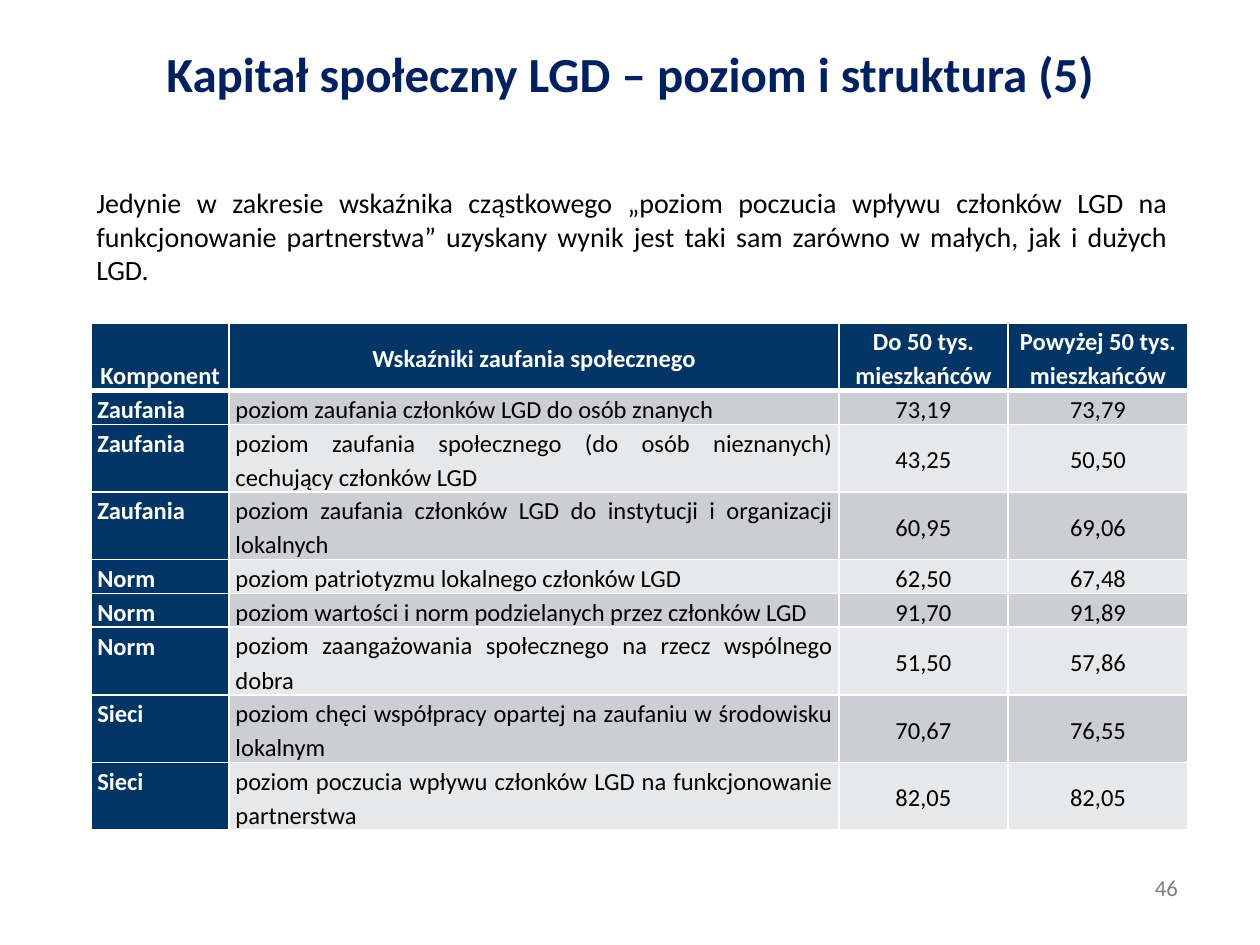
from lxml.etree import SubElement
from pptx import Presentation
from pptx.dml.color import RGBColor
from pptx.enum.text import MSO_ANCHOR as ANCHOR, PP_ALIGN as ALIGN
from pptx.oxml.ns import qn
from pptx.util import Pt

FONT = "Calibri"
NAVY, TITLE_BLUE, GREY = "013565", "002060", "808080"
WHITE, BLACK = "FFFFFF", "000000"
BANDS = ("CCCED3", "E7E8EA")
COL_WIDTHS = (79, 348.5, 96.5, 103)
LINE_HEIGHT = 19.3

HEADERS = ("Komponent", "Wskaźniki zaufania społecznego",
           "Do 50 tys. mieszkańców", "Powyżej 50 tys. mieszkańców")
# component, indicator, small LGD, large LGD, text lines in the row
INDICATORS = (
    ("Zaufania", "poziom zaufania członków LGD do osób znanych", "73,19", "73,79", 1),
    ("Zaufania", "poziom zaufania społecznego (do osób nieznanych) cechujący członków LGD",
     "43,25", "50,50", 2),
    ("Zaufania", "poziom zaufania członków LGD do instytucji i organizacji lokalnych",
     "60,95", "69,06", 2),
    ("Norm", "poziom patriotyzmu lokalnego członków LGD", "62,50", "67,48", 1),
    ("Norm", "poziom wartości i norm podzielanych przez członków LGD", "91,70", "91,89", 1),
    ("Norm", "poziom zaangażowania społecznego na rzecz wspólnego dobra",
     "51,50", "57,86", 2),
    ("Sieci", "poziom chęci współpracy opartej na zaufaniu w środowisku lokalnym",
     "70,67", "76,55", 2),
    ("Sieci", "poziom poczucia wpływu członków LGD na funkcjonowanie partnerstwa",
     "82,05", "82,05", 2),
)


def rgb(value):
    return RGBColor.from_string(value)


def write(tf, text, size, color, align, bold=False):
    tf.text = text
    p = tf.paragraphs[0]
    p.alignment = align
    font = p.runs[0].font
    font.name, font.size, font.bold = FONT, Pt(size), bold
    font.color.rgb = rgb(color)
    return p


def add_text(slide, box, text, size, color, align, bold=False):
    tf = slide.shapes.add_textbox(*map(Pt, box)).text_frame
    tf.word_wrap = True
    write(tf, text, size, color, align, bold)


def set_borders(cell, top=1, bottom=1):
    tc_pr = cell._tc.get_or_add_tcPr()
    for i, (side, width) in enumerate((("L", 1), ("R", 1), ("T", top), ("B", bottom))):
        ln = SubElement(tc_pr, qn(f"a:ln{side}"), w=str(Pt(width)))
        fill = SubElement(ln, qn("a:solidFill"))
        SubElement(fill, qn("a:srgbClr"), val=WHITE)
        tc_pr.insert(i, ln)  # borders come before the fill


def fill_cell(cell, text, fill, color, align, anchor, bold):
    cell.margin_left = cell.margin_right = Pt(3.6)
    cell.margin_top = cell.margin_bottom = 0
    cell.vertical_anchor = anchor
    cell.fill.solid()
    cell.fill.fore_color.rgb = rgb(fill)
    write(cell.text_frame, text, 14, color, align, bold).line_spacing = 1.15


def add_indicator_table(slide, left, top):
    lines = [2] + [row[-1] for row in INDICATORS]
    frame = slide.shapes.add_table(len(lines), len(COL_WIDTHS), Pt(left), Pt(top),
                                   Pt(sum(COL_WIDTHS)), Pt(sum(lines) * LINE_HEIGHT))
    table = frame.table
    table.horz_banding = False
    for col, width in zip(table.columns, COL_WIDTHS):
        col.width = Pt(width)
    for row, count in zip(table.rows, lines):
        row.height = Pt(count * LINE_HEIGHT)

    for c, text in enumerate(HEADERS):
        cell = table.cell(0, c)
        anchor = ANCHOR.BOTTOM if c == 0 else ANCHOR.MIDDLE
        fill_cell(cell, text, NAVY, WHITE, ALIGN.CENTER, anchor, True)
        set_borders(cell, bottom=3)

    aligns = (ALIGN.LEFT, ALIGN.JUSTIFY, ALIGN.CENTER, ALIGN.CENTER)
    anchors = (ANCHOR.TOP, ANCHOR.BOTTOM, ANCHOR.MIDDLE, ANCHOR.MIDDLE)
    for r, row in enumerate(INDICATORS, 1):
        for c, (text, align, anchor) in enumerate(zip(row, aligns, anchors)):
            cell = table.cell(r, c)
            first = c == 0
            fill_cell(cell, text, NAVY if first else BANDS[(r - 1) % 2],
                      WHITE if first else BLACK, align, anchor, first)
            set_borders(cell, top=3 if r == 1 else 1)


def main():
    prs = Presentation()
    prs.slide_width, prs.slide_height = Pt(720), Pt(540)
    slide = prs.slides.add_slide(prs.slide_layouts[6])
    add_text(slide, (638, 495.5, 57, 23), "46", 13, GREY, ALIGN.CENTER)
    add_text(slide, (48, 102.5, 626.5, 65.5),
             "Jedynie w zakresie wskaźnika cząstkowego „poziom poczucia wpływu członków LGD "
             "na funkcjonowanie partnerstwa” uzyskany wynik jest taki sam zarówno w małych, "
             "jak i dużych LGD.", 16, BLACK, ALIGN.JUSTIFY)
    add_indicator_table(slide, 52, 184.5)
    add_text(slide, (36, 21.5, 648, 67), "Kapitał społeczny LGD – poziom i struktura (5)",
             28, TITLE_BLUE, ALIGN.CENTER, True)
    prs.save("out.pptx")


if __name__ == "__main__":
    main()
